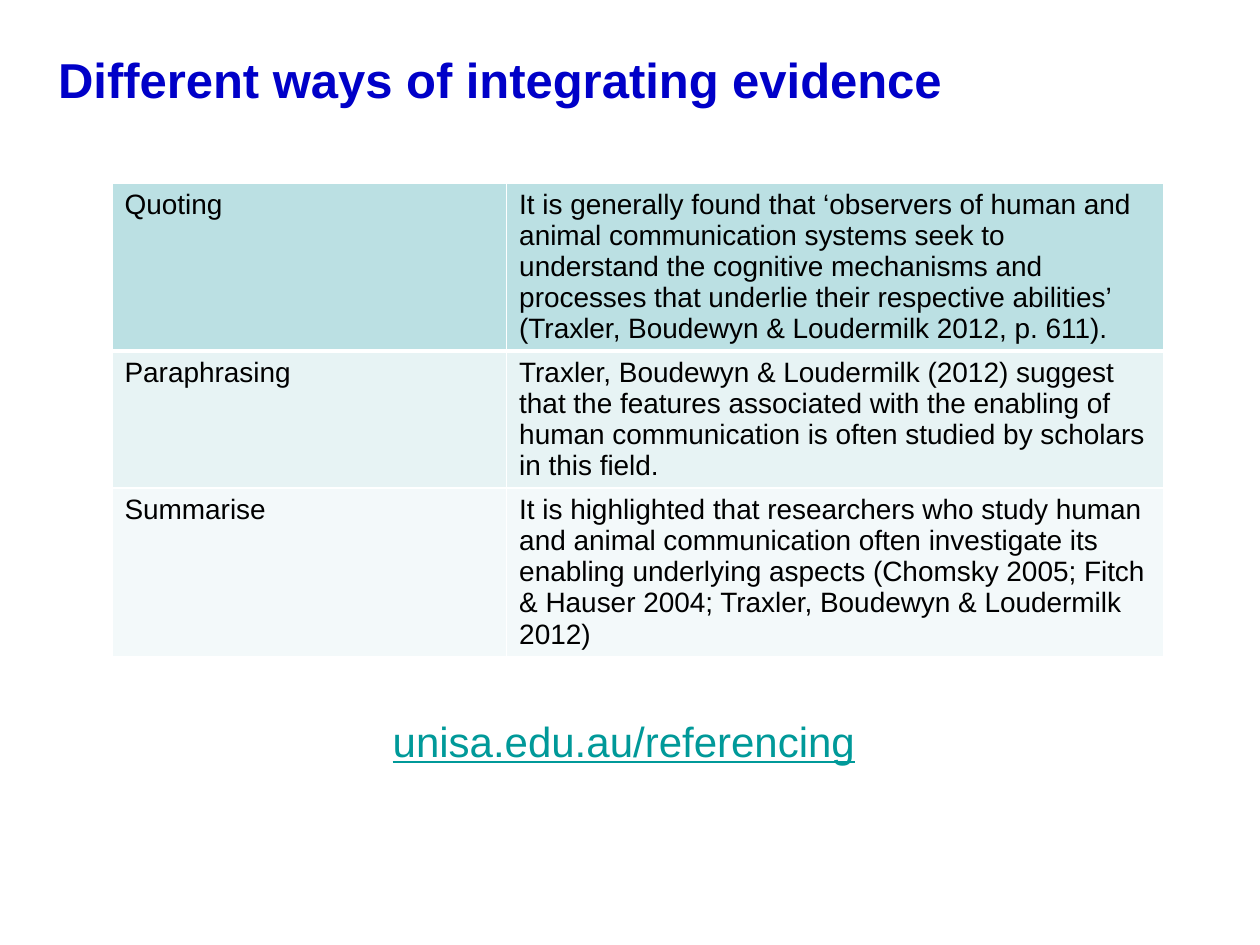
from pptx import Presentation
from pptx.dml.color import RGBColor
from pptx.enum.text import MSO_ANCHOR, PP_ALIGN
from pptx.oxml import parse_xml
from pptx.oxml.ns import nsdecls
from pptx.util import Pt

ROWS = [
    ("BBE0E3", 95, "Quoting",
     "It is generally found that ‘observers of human and animal communication "
     "systems seek to understand the cognitive mechanisms and processes that "
     "underlie their respective abilities’ (Traxler, Boudewyn & Loudermilk 2012, "
     "p. 611)."),
    ("E7F3F4", 78, "Paraphrasing",
     "Traxler, Boudewyn & Loudermilk (2012) suggest that the features associated "
     "with the enabling of human communication is often studied by scholars in "
     "this field."),
    ("F3F9FA", 95, "Summarise",
     "It is highlighted that researchers who study human and animal communication "
     "often investigate its enabling underlying aspects (Chomsky 2005; Fitch & "
     "Hauser 2004; Traxler, Boudewyn & Loudermilk 2012)"),
]


def rgb(color):
    return RGBColor.from_string(color)


def set_borders(cell, color, widths):
    """Draw the cell's sides; widths maps L, R, T, B (in that order) to points."""
    tc_pr = cell._tc.get_or_add_tcPr()
    for i, (side, width) in enumerate(widths.items()):
        tc_pr.insert(i, parse_xml(
            f'<a:ln{side} {nsdecls("a")} w="{Pt(width)}"><a:solidFill>'
            f'<a:srgbClr val="{color}"/></a:solidFill></a:ln{side}>'))


class Deck:
    font = "Arial"
    title_color, text_color, link_color = "0000C8", "000000", "009999"
    border_color = "FFFFFF"

    def __init__(self, prs):
        self.s = prs.slides.add_slide(prs.slide_layouts[5])

    def add_run(self, p, text, size, color, bold=False, underline=False):
        r = p.add_run()
        r.text = text
        f = r.font
        f.name, f.size, f.bold, f.underline = self.font, Pt(size), bold, underline
        f.color.rgb = rgb(color)

    def title(self, text, x, y, w, h):
        sp = self.s.shapes.title
        sp.left, sp.top, sp.width, sp.height = map(Pt, (x, y, w, h))
        tf = sp.text_frame
        tf.vertical_anchor = MSO_ANCHOR.TOP
        tf.margin_top = Pt(7)
        p = tf.paragraphs[0]
        p.alignment = PP_ALIGN.LEFT
        self.add_run(p, text, 28, self.title_color, bold=True)

    def table(self, rows, x, y, col_widths):
        height = sum(row[1] for row in rows)
        table = self.s.shapes.add_table(
            len(rows), len(col_widths), Pt(x), Pt(y),
            Pt(sum(col_widths)), Pt(height)).table
        for col, width in zip(table.columns, col_widths):
            col.width = Pt(width)
        for i, (fill, row_height, *texts) in enumerate(rows):
            table.rows[i].height = Pt(row_height)
            widths = {"L": 1, "R": 1, "T": 3 if i == 1 else 1, "B": 3 if i == 0 else 1}
            for cell, text in zip(table.rows[i].cells, texts):
                cell.fill.solid()
                cell.fill.fore_color.rgb = rgb(fill)
                set_borders(cell, self.border_color, widths)
                self.add_run(cell.text_frame.paragraphs[0], text, 16, self.text_color)

    def link_text(self, text, x, y, w, h):
        tf = self.s.shapes.add_textbox(Pt(x), Pt(y), Pt(w), Pt(h)).text_frame
        tf.word_wrap = True
        tf.margin_top = Pt(6)
        p = tf.paragraphs[0]
        p.alignment = PP_ALIGN.CENTER
        self.add_run(p, text, 24, self.link_color, underline=True)


def main():
    prs = Presentation()
    prs.slide_width, prs.slide_height = Pt(720), Pt(540)
    deck = Deck(prs)
    deck.title("Different ways of integrating evidence", 26, 21, 656, 52.5)
    deck.table(ROWS, 64, 104.5, (225.5, 375.5))
    deck.link_text("unisa.edu.au/referencing", 65.5, 403, 582, 36)
    prs.save("out.pptx")


if __name__ == "__main__":
    main()
